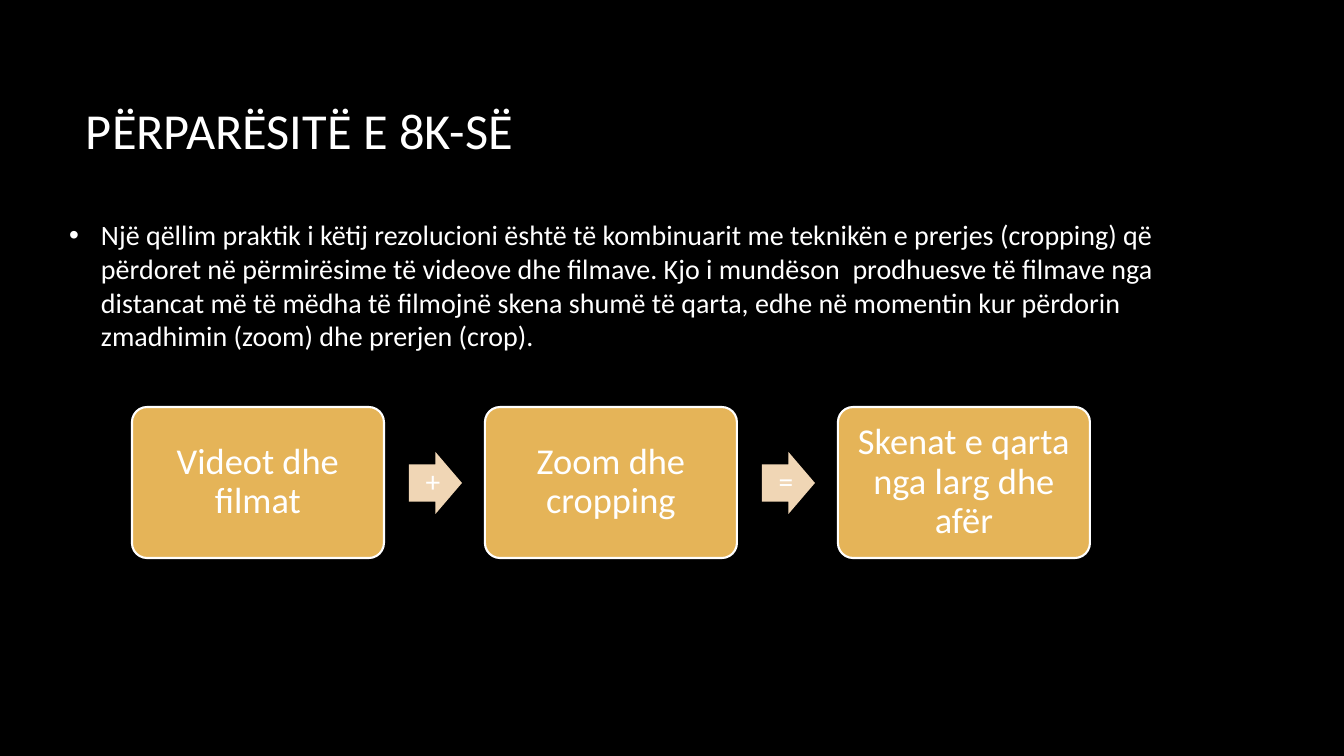
"""Build the slide on the advantages of 8K."""
from dataclasses import dataclass

from lxml.etree import SubElement
from pptx import Presentation
from pptx.dml.color import RGBColor
from pptx.enum.shapes import MSO_SHAPE
from pptx.enum.text import MSO_ANCHOR, PP_ALIGN
from pptx.oxml.ns import qn
from pptx.util import Pt


@dataclass(frozen=True)
class Theme:
    font: str = "Calibri"
    back: RGBColor = RGBColor(0, 0, 0)
    ink: RGBColor = RGBColor(255, 255, 255)
    box: RGBColor = RGBColor(0xE5, 0xB4, 0x58)
    arrow: RGBColor = RGBColor(0xF0, 0xD6, 0xB5)
    title: int = 36
    body: int = 20
    label: int = 26
    sign: int = 21


theme = Theme()


def px(count):
    return round(count * 914400 / 100.8)


def write(shape, text, size, align=PP_ALIGN.LEFT, pads=(10, 5, 10, 5)):
    frame = shape.text_frame
    frame.text = text
    frame.word_wrap = True
    frame.vertical_anchor = MSO_ANCHOR.MIDDLE
    frame.margin_left, frame.margin_top, frame.margin_right, frame.margin_bottom = map(px, pads)
    para = frame.paragraphs[0]
    para.alignment = align
    font = para.runs[0].font
    font.name, font.size = theme.font, Pt(size)
    font.color.rgb = theme.ink
    return para


deck = Presentation()
deck.slide_width, deck.slide_height = px(1344), px(756)
slide = deck.slides.add_slide(deck.slide_layouts[6])
slide.background.fill.solid()
slide.background.fill.fore_color.rgb = theme.back
shapes = slide.shapes

title = shapes.add_textbox(px(76), px(78), px(1117), px(102))
write(title, "PËRPARËSITË E 8K-SË", theme.title)

body = shapes.add_textbox(px(59), px(105), px(1117), px(360))
para = write(
    body,
    "Një qëllim praktik i këtij rezolucioni është të kombinuarit me teknikën e prerjes "
    "(cropping) që përdoret në përmirësime të videove dhe filmave. Kjo i mundëson  "
    "prodhuesve të filmave nga distancat më të mëdha të filmojnë skena shumë të qarta, "
    "edhe në momentin kur përdorin zmadhimin (zoom) dhe prerjen (crop).",
    theme.body,
)
props = para._p.get_or_add_pPr()
props.set("marL", str(px(32)))
props.set("indent", str(-px(32)))
SubElement(props, qn("a:buFont"), typeface="Arial")
SubElement(props, qn("a:buChar"), char="•")

left, top, wide, high, step = 132, 407, 252, 151, 353
steps = [
    ("Videot dhe filmat", "+"),
    ("Zoom dhe cropping", "="),
    ("Skenat e qarta nga larg dhe afër", None),
]
for index, (label, sign) in enumerate(steps):
    start = left + index * step
    box = shapes.add_shape(
        MSO_SHAPE.ROUNDED_RECTANGLE, px(start), px(top), px(wide), px(high)
    )
    box.adjustments[0] = 0.1
    box.shadow.inherit = False
    box.fill.solid()
    box.fill.fore_color.rgb = theme.box
    box.line.color.rgb = theme.ink
    box.line.width = Pt(1.5)
    para = write(box, label, theme.label, PP_ALIGN.CENTER, (7, 7, 7, 7))
    para.line_spacing = 0.9
    if sign:
        arrow = shapes.add_shape(
            MSO_SHAPE.RIGHT_ARROW, px(start + wide + 25), px(452), px(53), px(62)
        )
        arrow.adjustments[0] = 0.6
        arrow.adjustments[1] = 0.5
        arrow.shadow.inherit = False
        arrow.fill.solid()
        arrow.fill.fore_color.rgb = theme.arrow
        arrow.line.fill.background()
        para = write(arrow, sign, theme.sign, PP_ALIGN.CENTER, (11, 0, 0, 0))
        para.line_spacing = 0.9

deck.save("out.pptx")
